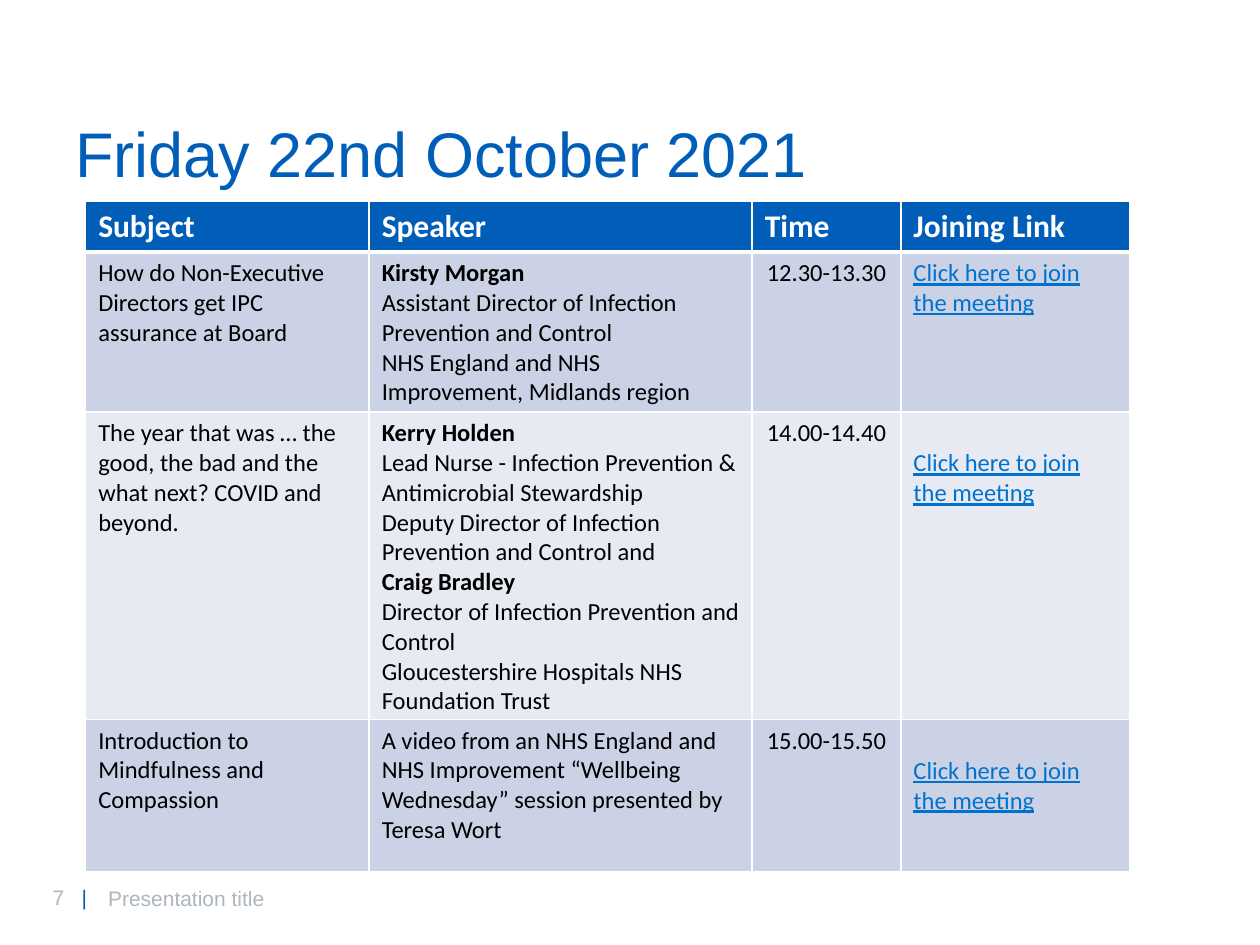
from dataclasses import dataclass
from typing import Any

from lxml.etree import SubElement
from pptx import Presentation
from pptx.dml.color import RGBColor
from pptx.enum.text import MSO_ANCHOR as Anchor, PP_ALIGN as Align
from pptx.oxml import parse_xml
from pptx.oxml.ns import nsdecls, qn
from pptx.util import Inches, Pt

BLUE, LINK, GREY = "005EB8", "0072CE", "ADB6BE"
BLACK, WHITE = "000000", "FFFFFF"
BANDS = ("CCD2E6", "E7EAF3")
COLUMNS, ROWS = 100, 75

HEADER = {"name": "Calibri", "size": Pt(18), "bold": True, "color": WHITE}
BODY = {"name": "Calibri", "size": Pt(14), "bold": False, "color": BLACK}
NAME = {**BODY, "bold": True}
JOIN = {**BODY, "color": LINK, "underline": True}
TITLE = {"name": "Arial", "size": Pt(36), "color": BLUE}
FOOTER = {"name": "Arial", "size": Pt(12), "color": GREY}
DIVIDER = {**FOOTER, "color": BLUE}

HEADINGS = ("Subject", "Speaker", "Time", "Joining Link")
WIDTHS = (22.5, 30.4, 11.8, 18.2)
HEIGHTS = (4, 12.7, 24.4, 12.1)
LINK_TEXT = "Click here to join the meeting"
SESSIONS = (
    ("How do Non-Executive Directors get IPC assurance at Board",
     (("Kirsty Morgan", NAME),
      ("Assistant Director of Infection Prevention and Control", BODY),
      ("NHS England and NHS Improvement, Midlands region", BODY)),
     "12.30-13.30", 0.5),
    ("The year that was … the good, the bad and the what next? COVID and beyond.",
     (("Kerry Holden", NAME),
      ("Lead Nurse - Infection Prevention & Antimicrobial Stewardship", BODY),
      ("Deputy Director of Infection Prevention and Control and", BODY),
      ("Craig Bradley", NAME),
      ("Director of Infection Prevention and Control", BODY),
      ("Gloucestershire Hospitals NHS Foundation Trust", BODY)),
     "14.00-14.40", 2.9),
    ("Introduction to Mindfulness and Compassion",
     (("A video from an NHS England and NHS Improvement “Wellbeing Wednesday” "
       "session presented by Teresa Wort", BODY),),
     "15.00-15.50", 2.9),
)


def color(value):
    return RGBColor.from_string(value)


@dataclass
class Page:
    presentation: Any
    slide: Any

    def across(self, columns):
        return int(self.presentation.slide_width * columns / COLUMNS)

    def down(self, rows):
        return int(self.presentation.slide_height * rows / ROWS)

    def place(self, left, top, width, height):
        return self.across(left), self.down(top), self.across(width), self.down(height)

    def run(self, paragraph, text, style):
        run = paragraph.add_run()
        run.text = text
        for key, value in style.items():
            if key == "color":
                run.font.color.rgb = color(value)
            else:
                setattr(run.font, key, value)

    def text(self, box, runs, anchor=Anchor.TOP, spacing=1.0, tab=None):
        frame = self.slide.shapes.add_textbox(*self.place(*box)).text_frame
        frame.word_wrap = True
        frame.vertical_anchor = anchor
        paragraph = frame.paragraphs[0]
        paragraph.line_spacing = spacing
        if tab:
            stops = SubElement(paragraph._p.get_or_add_pPr(), qn("a:tabLst"))
            SubElement(stops, qn("a:tab"), pos=str(self.across(tab)), algn="l")
        for text, style in runs:
            self.run(paragraph, text, style)

    def table(self, left, top, widths, heights):
        box = self.place(left, top, sum(widths), sum(heights))
        table = self.slide.shapes.add_table(len(heights), len(widths), *box).table
        for column, width in zip(table.columns, widths):
            column.width = self.across(width)
        for row, height in zip(table.rows, heights):
            row.height = self.down(height)
        return table

    def cell(self, cell, lines, fill, borders, align=Align.LEFT, top=0.5):
        cell.fill.solid()
        cell.fill.fore_color.rgb = color(fill)
        cell.margin_top = self.down(top)
        properties = cell._tc.get_or_add_tcPr()
        for index, (side, points) in enumerate(zip("LRTB", borders)):
            properties.insert(index, parse_xml(
                f'<a:ln{side} {nsdecls("a")} w="{Pt(points)}"><a:solidFill>'
                f'<a:srgbClr val="{WHITE}"/></a:solidFill></a:ln{side}>'))
        frame = cell.text_frame
        for index, (text, style) in enumerate(lines):
            paragraph = frame.add_paragraph() if index else frame.paragraphs[0]
            paragraph.alignment = align
            self.run(paragraph, text, style)


def main():
    presentation = Presentation()
    presentation.slide_width, presentation.slide_height = Inches(10), Inches(7.5)
    page = Page(presentation, presentation.slides.add_slide(presentation.slide_layouts[6]))

    page.text((3.2, 69.7, 7.1, 3), [("7\t", FOOTER), ("|", DIVIDER)], tab=2.3)
    page.text((5, 9.3, 71.8, 6.7), [("Friday 22nd October 2021", TITLE)], spacing=0.9)
    page.text((7.6, 69.3, 62.6, 4), [("Presentation title", FOOTER)], Anchor.MIDDLE)

    table = page.table(6.8, 16, WIDTHS, HEIGHTS)
    for column, heading in enumerate(HEADINGS):
        page.cell(table.cell(0, column), [(heading, HEADER)], BLUE, (1, 1, 1, 3))
    for row, (subject, speakers, time, link_top) in enumerate(SESSIONS, 1):
        fill = BANDS[(row - 1) % 2]
        borders = (1, 1, 3 if row == 1 else 1, 1)
        subject_cell, speaker_cell, time_cell, link_cell = table.rows[row].cells
        page.cell(subject_cell, [(subject, BODY)], fill, borders)
        page.cell(speaker_cell, speakers, fill, borders)
        page.cell(time_cell, [(time, BODY)], fill, borders, align=Align.CENTER)
        page.cell(link_cell, [(LINK_TEXT, JOIN)], fill, borders, top=link_top)

    presentation.save("out.pptx")


if __name__ == "__main__":
    main()
